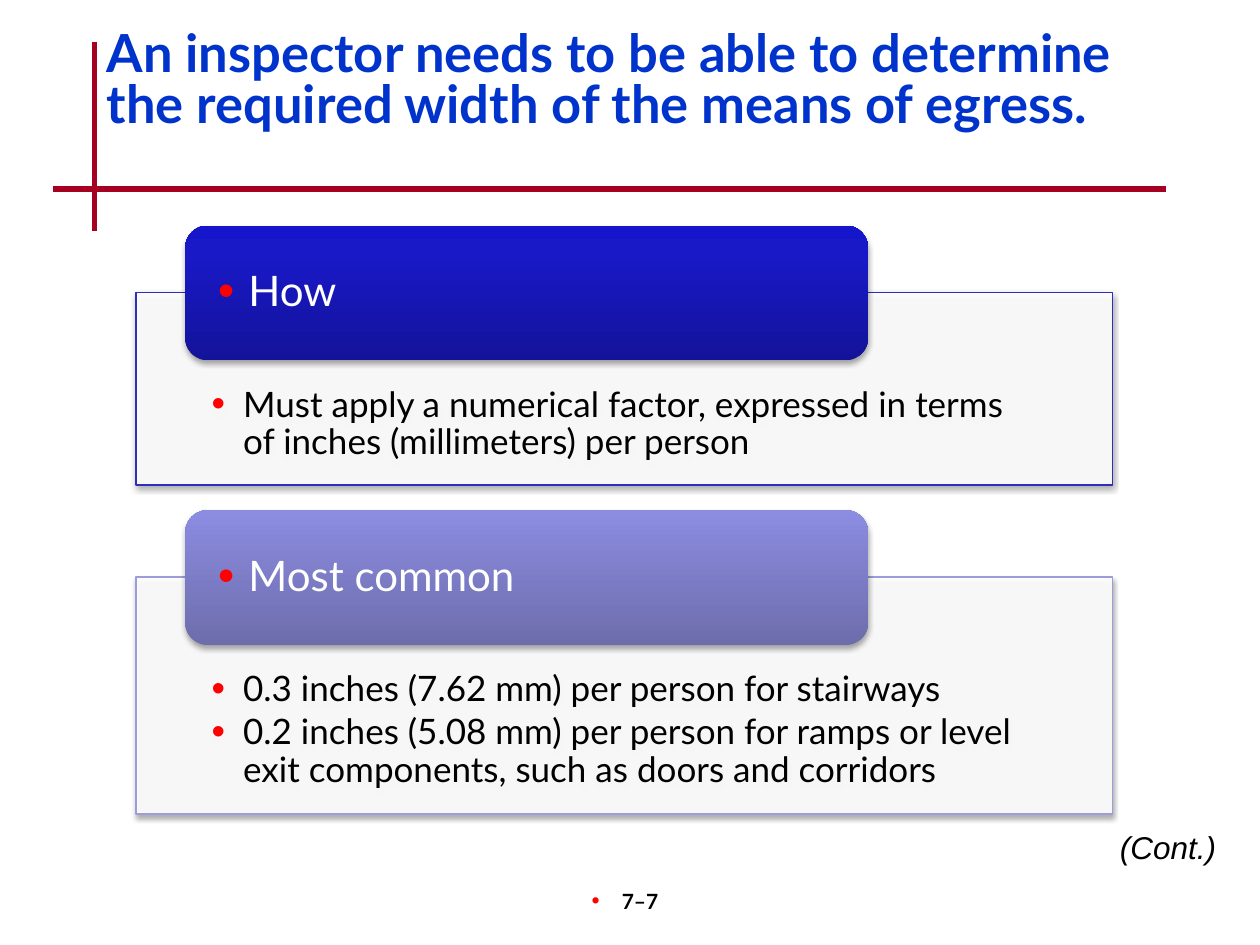
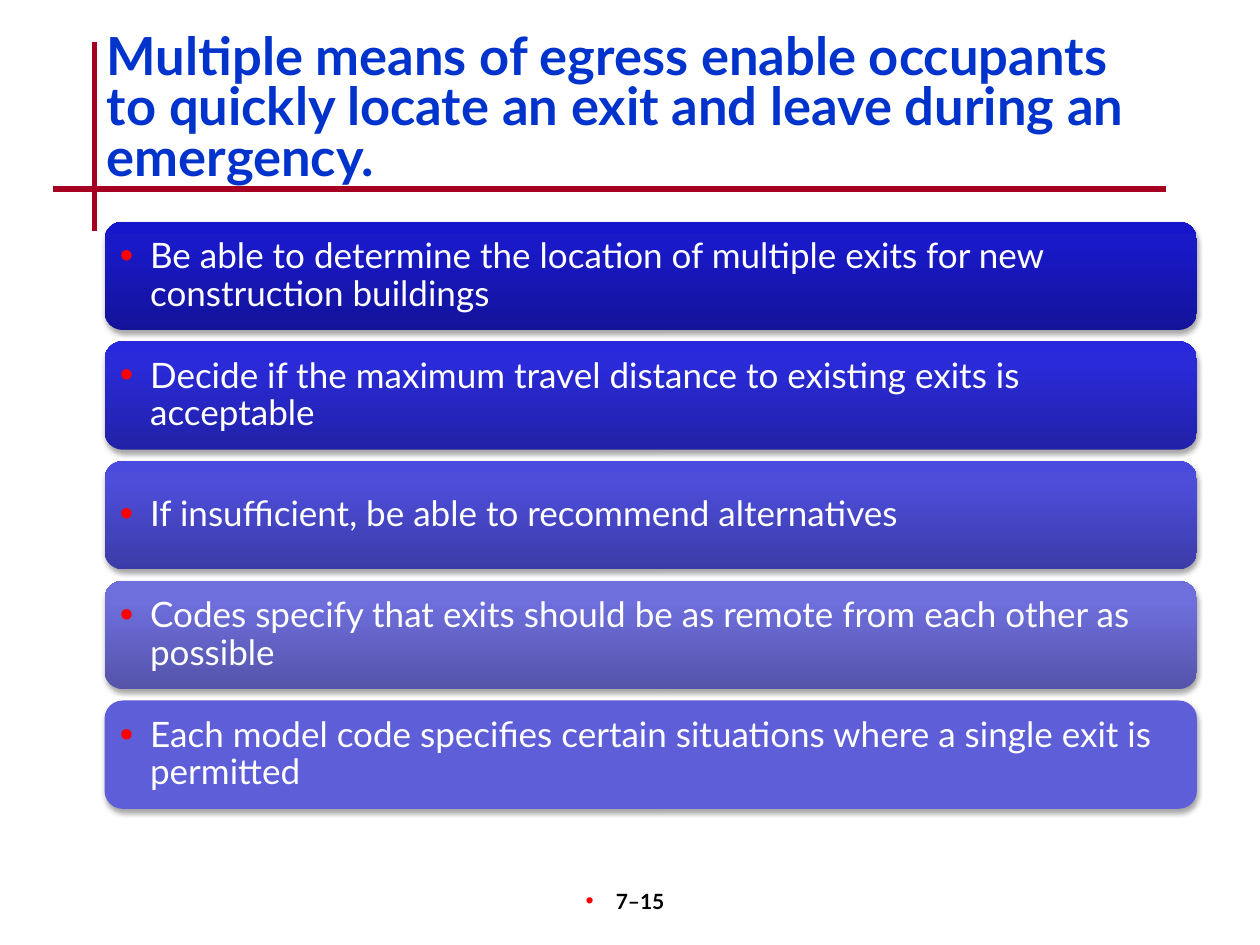
"""Build two slides on the width and number of means of egress."""
from lxml import etree
from pptx import Presentation
from pptx.dml.color import RGBColor
from pptx.enum import shapes, text
from pptx.oxml.ns import qn
from pptx.util import Inches, Pt

COLORS = {
    "title": "0033CC", "rule": "A50021", "bullet": "FF0000",
    "black": "000000", "white": "FFFFFF",
    "how_border": "2E2EB9", "common_border": "9C9CDD", "last_bar": "5E5ED8",
}
GRADIENTS = {
    "navy": [(0, "13139A"), (80, "1919C8"), (100, "1515CC")],
    "royal": [(0, "2121A7"), (80, "2A2AD9"), (100, "2727DD")],
    "violet": [(0, "3B3BA8"), (80, "4D4DDA"), (100, "4A4ADE")],
    "lavender": [(0, "5454AA"), (80, "6E6EDC"), (100, "6C6CDF")],
    "pale": [(0, "6D6DAC"), (100, "8C8CE2")],
}
FONT = "Lato"
ALIGN = text.PP_ALIGN


def write(shape, lines, size, color="black", font=FONT, bold=False, italic=False,
          align=ALIGN.LEFT, anchor=text.MSO_ANCHOR.TOP, insets=(0.1, 0.05, 0.1, 0.05),
          spacing=1.0, after=0, bullet_indent=None):
    frame = shape.text_frame
    frame.word_wrap = True
    frame.vertical_anchor = anchor
    frame.margin_left, frame.margin_top, frame.margin_right, frame.margin_bottom = map(Inches, insets)
    for index, line in enumerate(lines):
        paragraph = frame.paragraphs[0] if index == 0 else frame.add_paragraph()
        paragraph.alignment = align
        paragraph.line_spacing = spacing
        paragraph.space_after = Pt(after)
        if bullet_indent:
            properties = paragraph._p.get_or_add_pPr()
            properties.set("marL", str(Inches(bullet_indent)))
            properties.set("indent", str(-Inches(bullet_indent)))
            bullet_color = etree.SubElement(properties, qn("a:buClr"))
            etree.SubElement(bullet_color, qn("a:srgbClr"), val=COLORS["bullet"])
            etree.SubElement(properties, qn("a:buSzPct"), val="110000")
            etree.SubElement(properties, qn("a:buFont"), typeface="Arial")
            etree.SubElement(properties, qn("a:buChar"), char="•")
        run = paragraph.add_run()
        run.text = line
        run.font.name, run.font.size = font, Pt(size)
        run.font.bold, run.font.italic = bold, italic
        run.font.color.rgb = RGBColor.from_string(COLORS[color])


def add_panel(slide, kind, box, fill, border=None, opacity=None):
    shape = slide.shapes.add_shape(kind, *map(Inches, box))
    if fill in GRADIENTS:
        shape.fill.gradient()
        shape.fill.gradient_angle = 90
        stops = shape._element.spPr.find(".//" + qn("a:gsLst"))
        for stop in list(stops):
            stops.remove(stop)
        for position, value in GRADIENTS[fill]:
            stop = etree.SubElement(stops, qn("a:gs"), pos=str(position * 1000))
            etree.SubElement(stop, qn("a:srgbClr"), val=value)
    else:
        shape.fill.solid()
        shape.fill.fore_color.rgb = RGBColor.from_string(COLORS[fill])
    if opacity:
        fill_color = shape._element.spPr.find(qn("a:solidFill"))[0]
        etree.SubElement(fill_color, qn("a:alpha"), val=str(opacity * 1000))
    if border:
        shape.line.color.rgb = RGBColor.from_string(COLORS[border])
        shape.line.width = Pt(0.75)
    else:
        shape.line.fill.background()
    shape.shadow.inherit = False
    effects = shape._element.spPr.find(qn("a:effectLst"))
    shadow = etree.SubElement(effects, qn("a:outerShdw"), blurRad=str(Pt(3.1)), dist=str(Pt(1.8)),
                              dir="5400000", rotWithShape="0")
    shadow_color = etree.SubElement(shadow, qn("a:srgbClr"), val=COLORS["black"])
    etree.SubElement(shadow_color, qn("a:alpha"), val="35000")
    return shape


presentation = Presentation()
presentation.slide_width, presentation.slide_height = Inches(10), Inches(7.5)

slides = []
for title, title_top, page in [
    ("An inspector needs to be able to determine the required width of the means of egress.", 0.21, "7–7"),
    ("Multiple means of egress enable occupants to quickly locate an exit and leave during an emergency.",
     0.23, "7–15"),
]:
    slide = presentation.slides.add_slide(presentation.slide_layouts[6])
    slides.append(slide)
    for ends in [(0.75, 0.33, 0.75, 1.83), (0.42, 1.5, 9.25, 1.5)]:
        rule = slide.shapes.add_connector(shapes.MSO_CONNECTOR.STRAIGHT, *map(Inches, ends))
        rule.line.color.rgb = RGBColor.from_string(COLORS["rule"])
        rule.line.width = Pt(3)
        etree.SubElement(rule._element.spPr, qn("a:effectLst"))
    page_box = slide.shapes.add_textbox(Inches(3.92), Inches(7), Inches(2.08), Inches(0.5))
    write(page_box, [page], 12, bold=True, align=ALIGN.CENTER, bullet_indent=0.24)
    title_box = slide.shapes.add_textbox(Inches(0.75), Inches(title_top), Inches(8.5), Inches(1.17))
    write(title_box, [title], 30, color="title", bold=True, spacing=0.8)

width_slide, exits_slide = slides
RECTANGLE, ROUNDED = shapes.MSO_SHAPE.RECTANGLE, shapes.MSO_SHAPE.ROUNDED_RECTANGLE

for heading, details, top, height, fill, border in [
    ("How", ["Must apply a numerical factor, expressed in terms of inches (millimeters) per person"],
     2.32, 1.53, "navy", "how_border"),
    ("Most common", ["0.3 inches (7.62 mm) per person for stairways",
                     "0.2 inches (5.08 mm) per person for ramps or level exit components, "
                     "such as doors and corridors"],
     4.58, 1.88, "pale", "common_border"),
]:
    detail_panel = add_panel(width_slide, RECTANGLE, (1.08, top, 7.75, height), "white", border, opacity=90)
    write(detail_panel, details, 20, insets=(0.6, 0.75, 0.6, 0.16), spacing=0.9, after=3, bullet_indent=0.25)
    heading_panel = add_panel(width_slide, ROUNDED, (1.47, top - 0.53, 5.42, 1.07), fill)
    write(heading_panel, [heading], 24, color="white", anchor=text.MSO_ANCHOR.MIDDLE,
          insets=(0.21, 0, 0.21, 0), spacing=0.9, bullet_indent=0.24)

continued = width_slide.shapes.add_textbox(Inches(8.08), Inches(6.52), Inches(1.67), Inches(0.4))
write(continued, ["(Cont.)"], 18, font="Arial", italic=True, align=ALIGN.RIGHT)

for row, (statement, fill) in enumerate([
    ("Be able to determine the location of multiple exits for new construction buildings", "navy"),
    ("Decide if the maximum travel distance to existing exits is acceptable", "royal"),
    ("If insufficient, be able to recommend alternatives", "violet"),
    ("Codes specify that exits should be as remote from each other as possible", "lavender"),
    ("Each model code specifies certain situations where a single exit is permitted", "last_bar"),
]):
    bar = add_panel(exits_slide, ROUNDED, (0.83, 1.76 + row * 0.95, 8.67, 0.86), fill)
    write(bar, [statement], 20, color="white", anchor=text.MSO_ANCHOR.MIDDLE,
          insets=(0.08, 0.08, 0.08, 0.08), spacing=0.9, bullet_indent=0.24)

presentation.save("out.pptx")
